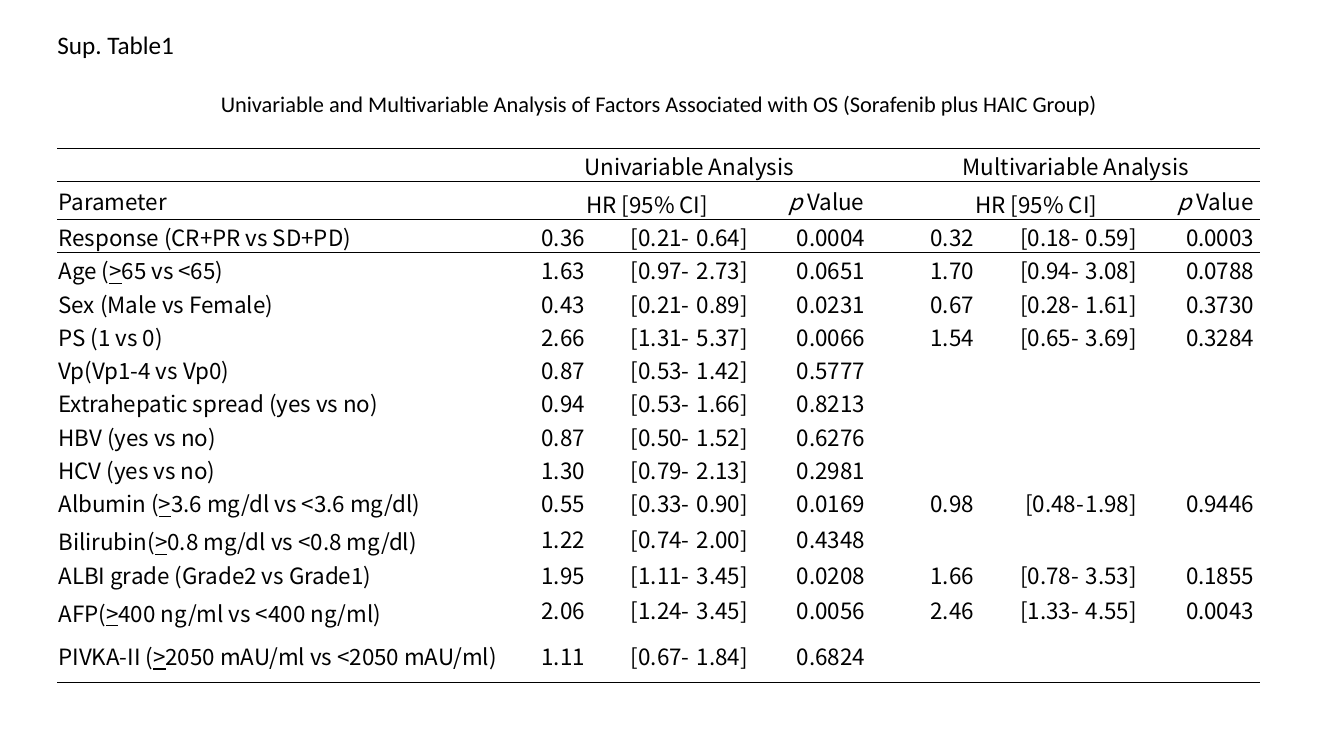
"""Build a slide with a table of survival factors."""
import lxml.etree
import pptx
import pptx.dml.color
import pptx.enum.text
import pptx.oxml.ns
import pptx.util

Inches = pptx.util.Inches
Pt = pptx.util.Pt
qn = pptx.oxml.ns.qn
Align = pptx.enum.text.PP_ALIGN

COLUMNS = [4.46, 0.83, 1.04, 0.91, 0.83, 0.25, 0.83, 1.04, 0.91, 0.83]
ROW_HEIGHTS = [0.27, 0.3] + [0.27] * 9 + [0.3, 0.27, 0.3, 0.53]
UNIVARIABLE, MULTIVARIABLE = 1, 6
FACTORS = [
    ("Response (CR+PR vs SD+PD)", "0.36 [0.21- 0.64] 0.0004", "0.32 [0.18- 0.59] 0.0003"),
    ("Age (>65 vs <65)", "1.63 [0.97- 2.73] 0.0651", "1.70 [0.94- 3.08] 0.0788"),
    ("Sex (Male vs Female)", "0.43 [0.21- 0.89] 0.0231", "0.67 [0.28- 1.61] 0.3730"),
    ("PS (1 vs 0)", "2.66 [1.31- 5.37] 0.0066", "1.54 [0.65- 3.69] 0.3284"),
    ("Vp(Vp1-4 vs Vp0)", "0.87 [0.53- 1.42] 0.5777", ""),
    ("Extrahepatic spread (yes vs no)", "0.94 [0.53- 1.66] 0.8213", ""),
    ("HBV (yes vs no)", "0.87 [0.50- 1.52] 0.6276", ""),
    ("HCV (yes vs no)", "1.30 [0.79- 2.13] 0.2981", ""),
    ("Albumin (>3.6 mg/dl vs <3.6 mg/dl)", "0.55 [0.33- 0.90] 0.0169", "0.98 [0.48-1.98] 0.9446"),
    ("Bilirubin(>0.8 mg/dl vs <0.8 mg/dl)", "1.22 [0.74- 2.00] 0.4348", ""),
    ("ALBI grade (Grade2 vs Grade1)", "1.95 [1.11- 3.45] 0.0208", "1.66 [0.78- 3.53] 0.1855"),
    ("AFP(>400 ng/ml vs <400 ng/ml)", "2.06 [1.24- 3.45] 0.0056", "2.46 [1.33- 4.55] 0.0043"),
    ("PIVKA-II (>2050 mAU/ml vs <2050 mAU/ml)", "1.11 [0.67- 1.84] 0.6824", ""),
]


def color(value):
    return pptx.dml.color.RGBColor.from_string(value)


def split_estimate(estimate):
    ratio, rest = estimate.split(" ", 1)
    interval, p_value = rest.rsplit(" ", 1)
    low, high = interval.split("-")
    gap = " " if high.startswith(" ") else ""
    return ratio + " ", low + "-" + gap, high.strip(), p_value + " "


class SlideBuilder:
    def __init__(self, page):
        self.page = page
        self.ink = "000000"
        self.text_font = "Calibri"
        self.table_font = "Noto Sans CJK JP"
        self.table_size = 16

    def add_span(self, para, text, font, size, italic=None, underline=None):
        span = para.add_run()
        span.text = text
        span.font.name = font
        span.font.size = Pt(size)
        span.font.color.rgb = color(self.ink)
        span.font.italic = italic
        span.font.underline = underline

    def add_text(self, place, text, size, align=Align.LEFT, wrap=True):
        box = self.page.shapes.add_textbox(*map(Inches, place))
        box.text_frame.word_wrap = wrap
        box.text_frame.auto_size = pptx.enum.text.MSO_AUTO_SIZE.SHAPE_TO_FIT_TEXT
        para = box.text_frame.paragraphs[0]
        para.alignment = align
        self.add_span(para, text, self.text_font, size)

    def add_table(self, left, top, columns, heights):
        frame = self.page.shapes.add_table(
            len(heights), len(columns), Inches(left), Inches(top),
            Inches(sum(columns)), Inches(sum(heights)))
        table = frame.table
        table.first_row = table.horz_banding = False
        style = table._tbl.tblPr.find(qn("a:tableStyleId"))
        style.text = "{2D5ABB26-0587-4C30-8999-92F81FD0307C}"
        for column, width in zip(table.columns, columns):
            column.width = Inches(width)
        for row, height in zip(table.rows, heights):
            row.height = Inches(height)
        for cell in table.iter_cells():
            cell.margin_left = cell.margin_right = cell.margin_top = Inches(0.01)
            cell.margin_bottom = 0
            cell.vertical_anchor = pptx.enum.text.MSO_ANCHOR.MIDDLE
            cell.fill.background()
            end = lxml.etree.SubElement(
                cell.text_frame.paragraphs[0]._p, qn("a:endParaRPr"), sz=str(self.table_size * 100))
            lxml.etree.SubElement(end, qn("a:latin"), typeface=self.table_font)
        return table

    def add_rule(self, cells, side):
        for cell in cells:
            properties = cell._tc.get_or_add_tcPr()
            line = lxml.etree.Element(qn("a:" + side), w=str(Pt(1)))
            fill = lxml.etree.SubElement(line, qn("a:solidFill"))
            lxml.etree.SubElement(fill, qn("a:srgbClr"), val=self.ink)
            properties.insert(len(properties.findall(qn("a:lnT"))), line)

    def fill_cell(self, cell, text, align=Align.LEFT, loose=False, italic_start=False):
        para = cell.text_frame.paragraphs[0]
        para.alignment = align
        if loose:
            para.line_spacing = 1.15
            para.space_before = para.space_after = Pt(1)
        before, sign, after = text.partition(">")
        if italic_start:
            self.add_span(para, before[0], self.table_font, self.table_size, italic=True)
            before = before[1:]
        self.add_span(para, before, self.table_font, self.table_size)
        if sign:
            self.add_span(para, sign, self.table_font, self.table_size, underline=True)
            self.add_span(para, after, self.table_font, self.table_size)

    def fill_headings(self, table):
        headings = [(UNIVARIABLE, "Univariable Analysis"), (MULTIVARIABLE, "Multivariable Analysis ")]
        for first, title in headings:
            table.cell(0, first).merge(table.cell(0, first + 3))
            self.fill_cell(table.cell(0, first), title, Align.CENTER)
            table.cell(1, first).merge(table.cell(1, first + 2))
            self.fill_cell(table.cell(1, first), "HR [95% CI]", Align.CENTER, loose=True)
            self.fill_cell(table.cell(1, first + 3), "p Value", italic_start=True)
        self.fill_cell(table.cell(1, 0), "Parameter")

    def fill_factors(self, table):
        aligns = [Align.RIGHT, Align.RIGHT, Align.LEFT, Align.RIGHT]
        for row, (label, univariable, multivariable) in enumerate(FACTORS, 2):
            loose = label.startswith(("Bilirubin", "AFP"))
            self.fill_cell(table.cell(row, 0), label, loose=loose)
            for first, estimate in ((UNIVARIABLE, univariable), (MULTIVARIABLE, multivariable)):
                if estimate:
                    for offset, (text, align) in enumerate(zip(split_estimate(estimate), aligns)):
                        self.fill_cell(table.cell(row, first + offset), text, align)


def main():
    deck = pptx.Presentation()
    deck.slide_width, deck.slide_height = Inches(13.33), Inches(7.5)
    builder = SlideBuilder(deck.slides.add_slide(deck.slide_layouts[6]))
    table = builder.add_table(0.57, 1.47, COLUMNS, ROW_HEIGHTS)
    builder.fill_headings(table)
    builder.fill_factors(table)
    for row, side in ((0, "lnT"), (0, "lnB"), (1, "lnT"), (1, "lnB"), (2, "lnT"), (-1, "lnB")):
        builder.add_rule(table.rows[row % len(ROW_HEIGHTS)].cells, side)
    builder.add_text((0.47, 0.24, 1.37, 0.4), "Sup. Table1", 18, wrap=False)
    builder.add_text(
        (0.57, 0.85, 11.93, 0.37),
        "Univariable and Multivariable Analysis of Factors Associated with OS (Sorafenib plus HAIC Group)",
        16, Align.CENTER)
    deck.save("out.pptx")


if __name__ == "__main__":
    main()
